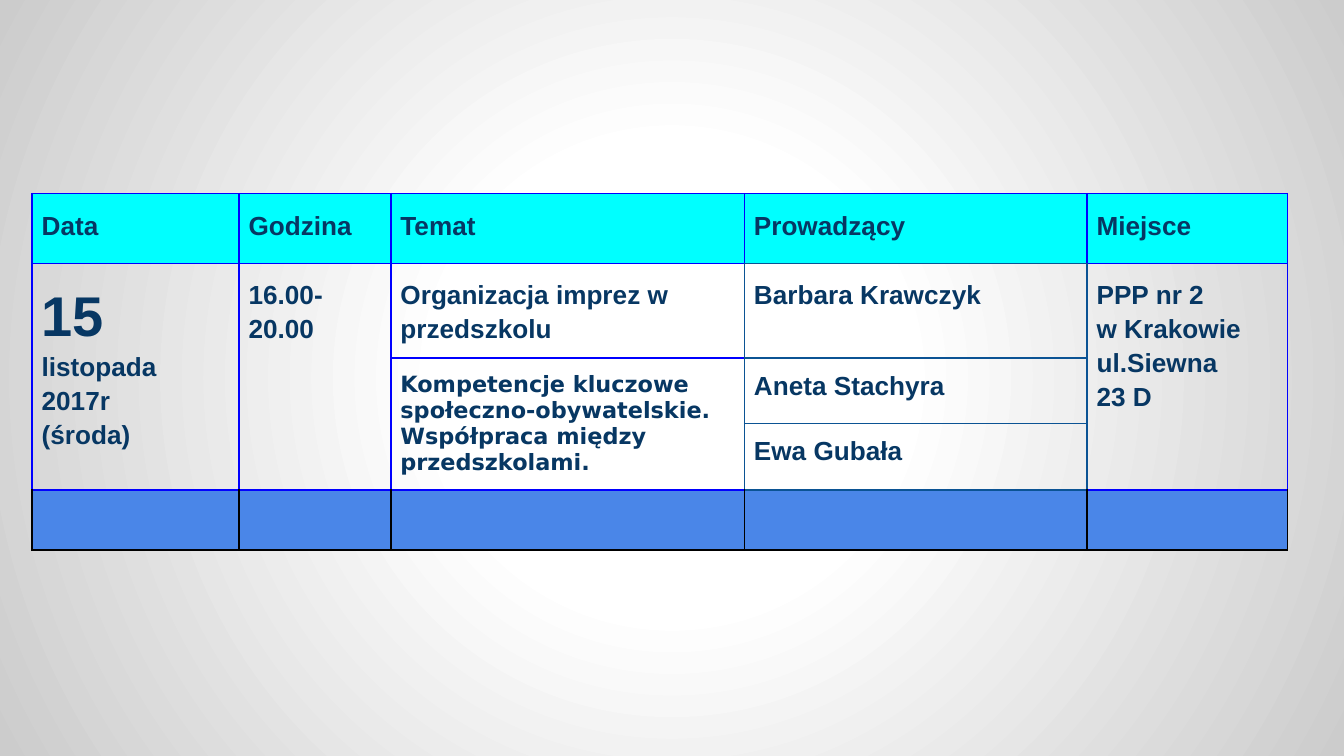
"""Build a one-slide workshop timetable with date, hours, topics, speakers and venue."""
from dataclasses import dataclass

import pptx
import pptx.dml.color
import pptx.oxml
import pptx.oxml.ns
import pptx.util

Inches = pptx.util.Inches
COLORS = {
    "text": "073763",
    "header": "00FFFF",
    "footer": "4A86E8",
    "blue": "0000FF",
    "teal": "0B5394",
    "black": "000000",
    "white": "FFFFFF",
    "gray": "CCCCCC",
}
SIDES = ("lnL", "lnR", "lnT", "lnB")
ALL_BLUE = ("blue",) * 4
ALL_TEAL = ("teal",) * 4
TOPIC_EDGES = ("blue", "teal", "blue", "blue")
COLUMN_WIDTHS = (1.54, 1.13, 2.63, 2.55, 1.49)
ROW_HEIGHTS = (0.52, 0.70, 0.49, 0.49, 0.45)


@dataclass(frozen=True)
class Entry:
    """One timetable cell; edges run left, right, top, bottom."""
    row: int
    column: int
    lines: tuple[str, ...] = ()
    edges: tuple[str, ...] = ALL_BLUE
    fill: str | None = None
    row_span: int = 1
    lead: str = ""
    size: float = 14
    font: str = "Arial"
    spacing: float = 1.15


HEADINGS = ("Data", "Godzina", "Temat", "Prowadzący", "Miejsce")
ENTRIES = [
    *(Entry(0, column, (heading,), fill="header",
            edges=("blue", "blue", "blue", "teal") if heading == "Prowadzący" else ALL_BLUE)
      for column, heading in enumerate(HEADINGS)),
    Entry(1, 0, ("listopada 2017r", "(środa)"), row_span=3, lead="15 "),
    Entry(1, 1, ("16.00-", "20.00"), row_span=3),
    Entry(1, 2, ("Organizacja imprez w przedszkolu",), TOPIC_EDGES),
    Entry(1, 3, ("Barbara Krawczyk",), ALL_TEAL),
    Entry(1, 4, ("PPP nr 2", "w Krakowie", "ul.Siewna", "23 D"),
          ("teal", "blue", "blue", "blue"), row_span=3),
    Entry(2, 2, ("Kompetencje kluczowe społeczno-obywatelskie. Współpraca między przedszkolami.",),
          TOPIC_EDGES, row_span=2, size=12, font="DejaVu Sans", spacing=1.0),
    Entry(2, 3, ("Aneta Stachyra",), ALL_TEAL, spacing=1.0),
    Entry(3, 3, ("Ewa Gubała",), ALL_TEAL, spacing=1.0),
    *(Entry(4, column, fill="footer",
            edges=("black", "black", "teal" if heading == "Prowadzący" else "blue", "black"))
      for column, heading in enumerate(HEADINGS)),
]


def rgb(name: str) -> pptx.dml.color.RGBColor:
    """Return a named colour."""
    return pptx.dml.color.RGBColor.from_string(COLORS[name])


def set_background(slide) -> None:
    """Give the slide a radial gradient, white in the middle."""
    stops = "".join(
        f'<a:gs pos="{percent * 1000}"><a:srgbClr val="{COLORS[name]}"/></a:gs>'
        for percent, name in ((0, "white"), (30, "white"), (100, "gray"))
    )
    background = pptx.oxml.parse_xml(
        f'<p:bg {pptx.oxml.ns.nsdecls("p", "a")}><p:bgPr><a:gradFill><a:gsLst>{stops}</a:gsLst>'
        '<a:path path="circle"><a:fillToRect l="50000" t="50000" r="50000" b="50000"/></a:path>'
        '</a:gradFill><a:effectLst/></p:bgPr></p:bg>'
    )
    slide.element.find(pptx.oxml.ns.qn("p:cSld")).insert(0, background)


def set_edges(cell, edges: tuple[str, ...]) -> None:
    """Draw the four borders of a cell."""
    properties = cell._tc.get_or_add_tcPr()
    for position, (side, name) in enumerate(zip(SIDES, edges)):
        properties.insert(position, pptx.oxml.parse_xml(
            f'<a:{side} {pptx.oxml.ns.nsdecls("a")} w="{pptx.util.Pt(1)}"><a:solidFill>'
            f'<a:srgbClr val="{COLORS[name]}"/></a:solidFill></a:{side}>'
        ))


def write_lines(cell, entry: Entry) -> None:
    """Write the text of an entry, with its larger lead first."""
    cell.margin_left = cell.margin_right = Inches(0.07)
    cell.margin_top = cell.margin_bottom = Inches(0.1)
    frame = cell.text_frame
    for index, line in enumerate(entry.lines):
        paragraph = frame.add_paragraph() if index else frame.paragraphs[0]
        paragraph.line_spacing = entry.spacing
        paragraph.font.name = entry.font
        paragraph.font.size = pptx.util.Pt(entry.size)
        paragraph.font.bold = True
        paragraph.font.color.rgb = rgb("text")
        if entry.lead and index == 0:
            lead = paragraph.add_run()
            lead.text = entry.lead
            lead.font.size = pptx.util.Pt(30)
        paragraph.add_run().text = line


def draw_entry(table, entry: Entry) -> None:
    """Fill, border and write one entry, merging the rows it spans."""
    origin = table.cell(entry.row, entry.column)
    last_row = entry.row + entry.row_span - 1
    if entry.row_span > 1:
        origin.merge(table.cell(last_row, entry.column))
    for row in range(entry.row, last_row + 1):
        cell = table.cell(row, entry.column)
        if entry.fill:
            cell.fill.solid()
            cell.fill.fore_color.rgb = rgb(entry.fill)
        else:
            cell.fill.background()
        set_edges(cell, entry.edges)
    if entry.lines:
        write_lines(origin, entry)


def main() -> None:
    """Build and save the slide."""
    presentation = pptx.Presentation()
    presentation.slide_width = Inches(10)
    presentation.slide_height = presentation.slide_width * 9 // 16
    slide = presentation.slides.add_slide(presentation.slide_layouts[6])
    set_background(slide)
    timetable = slide.shapes.add_table(
        len(ROW_HEIGHTS), len(COLUMN_WIDTHS), Inches(0.24), Inches(1.44),
        Inches(sum(COLUMN_WIDTHS)), Inches(sum(ROW_HEIGHTS)),
    ).table
    timetable.first_row = timetable.horz_banding = False
    for column, width in zip(timetable.columns, COLUMN_WIDTHS):
        column.width = Inches(width)
    for row, height in zip(timetable.rows, ROW_HEIGHTS):
        row.height = Inches(height)
    for entry in ENTRIES:
        draw_entry(timetable, entry)
    presentation.save("out.pptx")


if __name__ == "__main__":
    main()
